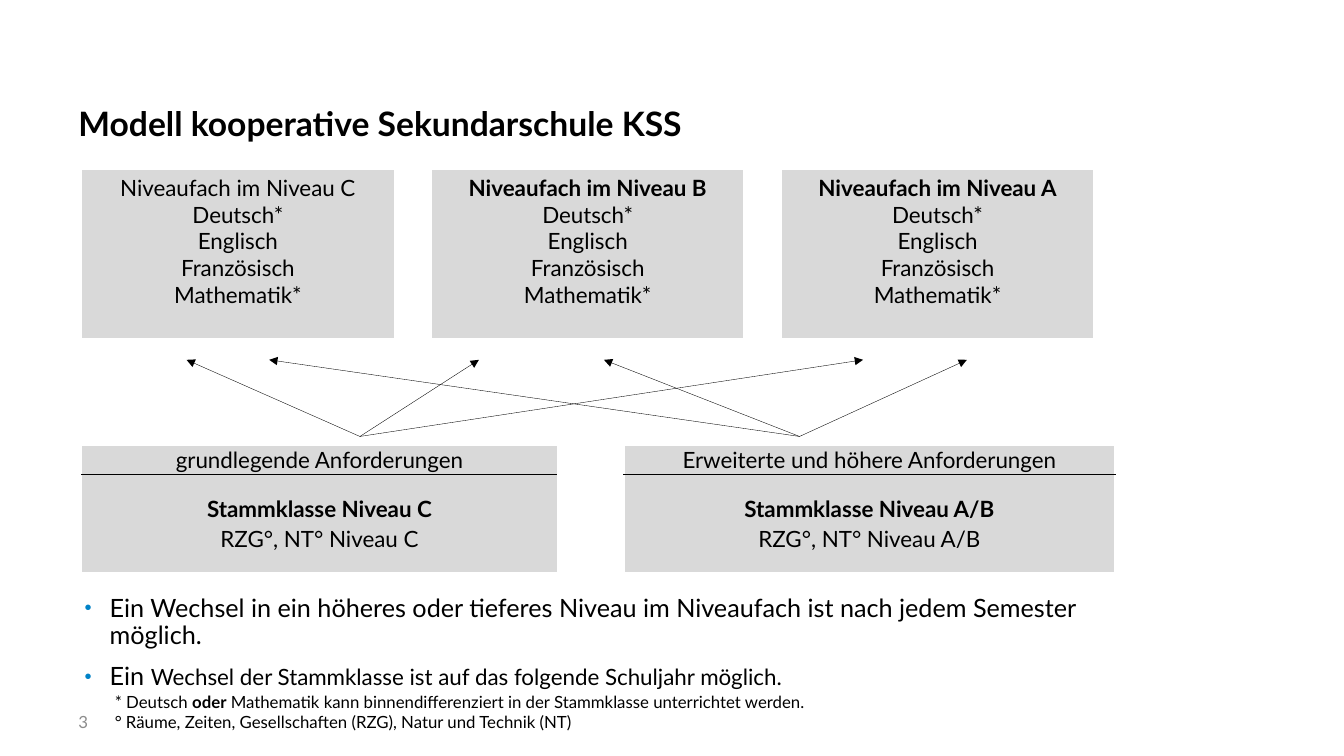
from copy import deepcopy
from lxml.etree import SubElement as Sub
from pptx import Presentation
from pptx.dml.color import RGBColor as RGB
from pptx.enum.shapes import MSO_CONNECTOR as Conn
from pptx.enum.text import MSO_ANCHOR as Anchor, PP_ALIGN as Align
from pptx.oxml.ns import qn
from pptx.util import Inches as In, Pt

BLACK = RGB(0, 0, 0)
GREY = RGB(0xD9, 0xD9, 0xD9)
PALE = RGB(0x8C, 0x8C, 0x8C)

deck = Presentation()
deck.slide_width, deck.slide_height = In(13.33), In(7.5)
slide = deck.slides.add_slide(deck.slide_layouts[6])
shapes = slide.shapes


def style(para, size, bold=False, color=BLACK):
    for run in para.runs:
        font = run.font
        font.name, font.size, font.bold = "Lato", Pt(size), bold
        font.color.rgb = color
    for br in para._p.findall(qn("a:br")):
        br.append(deepcopy(para.runs[0]._r.rPr))


def grid(left, top, cols, rows):
    size = In(sum(cols)), In(sum(rows))
    table = shapes.add_table(len(rows), len(cols), In(left), In(top), *size).table
    table.first_row = table.horz_banding = False
    for col, width in zip(table.columns, cols):
        col.width = In(width)
    for row, height in zip(table.rows, rows):
        row.height = In(height)
    for cell in table.iter_cells():
        cell.fill.background()
        cell.margin_top = cell.margin_bottom = 0
        end = cell.text_frame.paragraphs[0]._p.get_or_add_endParaRPr()
        end.set("sz", "1000")
    return table


title = shapes.add_textbox(In(0.68), In(1.02), In(12.2), In(0.79)).text_frame
title.word_wrap = True
title.text = "Modell kooperative Sekundarschule KSS"
title.paragraphs[0].line_spacing = 0.9
style(title.paragraphs[0], 24, True)

page = shapes.add_textbox(In(0.68), In(6.97), In(1.57), In(0.39)).text_frame
page.word_wrap = True
page.vertical_anchor = Anchor.MIDDLE
page.text = "3"
style(page.paragraphs[0], 12, color=PALE)

base = grid(0.81, 4.42, [4.72, 0.32, 0.34, 4.87], [0.29, 0.97])
base.cell(0, 1).merge(base.cell(0, 2))
classes = [
    (0, "grundlegende Anforderungen", "C"),
    (3, "Erweiterte und höhere Anforderungen", "A/B"),
]
for col, head, level in classes:
    body = f"Stammklasse Niveau {level}\nRZG°, NT° Niveau {level}"
    for row, text in enumerate([head, body]):
        cell = base.cell(row, col)
        cell.text = text
        cell.vertical_anchor = Anchor.MIDDLE
        cell.margin_left = cell.margin_right = In(0.07)
        for i, para in enumerate(cell.text_frame.paragraphs):
            para.alignment = Align.CENTER
            if i == 0:
                para.space_before = para.space_after = Pt(2)
            style(para, 16, row == 1 and i == 0)
        edge = Sub(cell._tc.get_or_add_tcPr(), qn("a:lnT" if row else "a:lnB"), w="12700")
        ink = Sub(Sub(edge, qn("a:solidFill")), qn("a:srgbClr"))
        ink.set("val", "000000")
        cell.fill.solid()
        cell.fill.fore_color.rgb = GREY

levels = grid(0.81, 1.68, [3.1, 0.37, 3.1, 0.37, 3.1], [1.68])
for i, level in enumerate("CBA"):
    cell = levels.cell(0, 2 * i)
    cell.margin_top = cell.margin_bottom = In(0.05)
    cell.fill.solid()
    cell.fill.fore_color.rgb = GREY
    frame = cell.text_frame
    frame.text = f"Niveaufach im Niveau {level}"
    frame.add_paragraph().text = "Deutsch*\nEnglisch\nFranzösisch\nMathematik*"
    for j, para in enumerate(frame.paragraphs):
        para.alignment = Align.CENTER
        style(para, 16, j == 0 and level != "C")

fans = [(3.57, [1.85, 4.75, 8.56]), (7.93, [2.67, 5.99, 9.59])]
for start, ends in fans:
    for end in ends:
        line = shapes.add_connector(Conn.STRAIGHT, In(start), In(4.33), In(end), In(3.57))
        line.line.color.rgb = BLACK
        line.line.width = Pt(0.25)
        Sub(line.line._get_or_add_ln(), qn("a:tailEnd"), type="triangle")
        Sub(line._element.spPr, qn("a:effectLst"))

notes = shapes.add_textbox(In(0.74), In(5.86), In(10.63), In(1.73)).text_frame
notes.word_wrap = True
points = [
    ["Ein Wechsel in ein höheres oder tieferes Niveau im Niveaufach ist nach jedem Semester möglich."],
    ["Ein ", "Wechsel der Stammklasse ist auf das folgende Schuljahr möglich."],
]
for i, parts in enumerate(points):
    para = notes.add_paragraph() if i else notes.paragraphs[0]
    para.line_spacing = 0.9
    if i:
        para.space_before = Pt(10)
    props = para._p.get_or_add_pPr()
    props.set("marL", str(In(0.25)))
    props.set("indent", str(-In(0.25)))
    Sub(Sub(props, qn("a:buClr")), qn("a:srgbClr"), val="0082C7")
    Sub(props, qn("a:buSzPct"), val="80000")
    Sub(props, qn("a:buFont"), typeface="Arial")
    Sub(props, qn("a:buChar"), char="•")
    for part in parts:
        para.add_run().text = part
    style(para, 18)
notes.paragraphs[1].runs[1].font.size = Pt(16)

foot = notes.add_paragraph()
foot._p.get_or_add_pPr().set("marL", str(In(0.3)))
foot.text = "* Deutsch "
for part in ["oder", " Mathematik kann binnendifferenziert in der Stammklasse unterrichtet werden."]:
    foot.add_run().text = part
foot.add_line_break()
foot.add_run().text = "° Räume, Zeiten, Gesellschaften (RZG), Natur und Technik (NT)"
style(foot, 12)
foot.runs[1].font.bold = True

deck.save("out.pptx")
